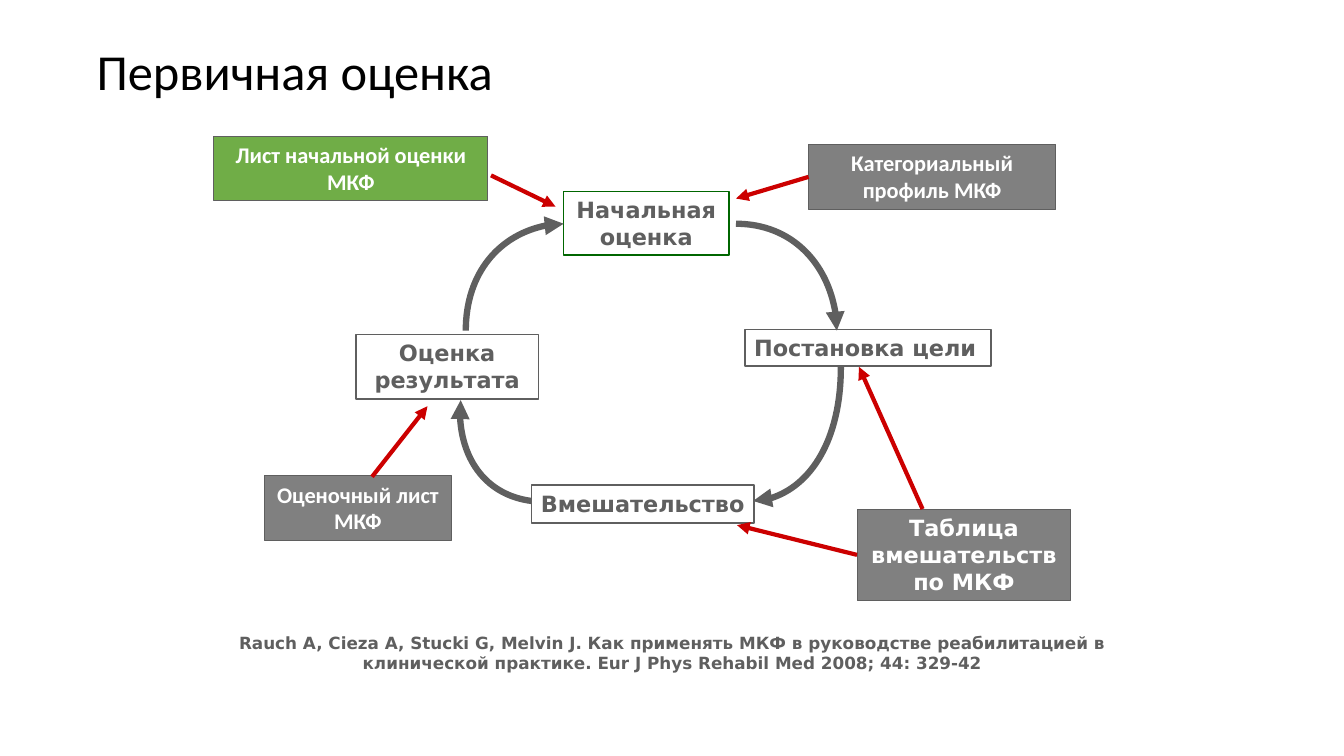
from dataclasses import dataclass

from lxml import etree
from pptx import Presentation
from pptx.dml.color import RGBColor
from pptx.enum.shapes import MSO_CONNECTOR, MSO_SHAPE
from pptx.enum.text import MSO_ANCHOR, MSO_AUTO_SIZE, PP_ALIGN
from pptx.oxml.ns import qn
from pptx.util import Inches, Pt

RECTANGLE = MSO_SHAPE.RECTANGLE
STRAIGHT = MSO_CONNECTOR.STRAIGHT
LEFT, CENTER = PP_ALIGN.LEFT, PP_ALIGN.CENTER
TOP = MSO_ANCHOR.TOP
FIT_SHAPE, NO_FIT = MSO_AUTO_SIZE.SHAPE_TO_FIT_TEXT, MSO_AUTO_SIZE.NONE
LEFT_SIDE = 1

SANS, BODY = "DejaVu Sans", "Calibri"
DARK, GRAY, GREEN, RED = "5F5F5F", "808080", "70AD47", "CC0000"
FOREST, WHITE, BLACK = "006600", "FFFFFF", "000000"

Point = tuple[float, float]


@dataclass
class Box:
    lines: list[str]
    left: float
    top: float
    width: float
    height: float
    fill: str | None = None
    line: str = DARK
    line_width: float = 1
    font: str = SANS
    color: str = DARK
    align: PP_ALIGN = CENTER


@dataclass
class Arrow:
    start: Point
    end: Point
    joined_tool: str | None = None


# Stages of the cycle
STAGES = [
    Box(["Начальная", "оценка"], 5.59, 1.9, 1.64, 0.63, line=FOREST),
    Box(["Постановка цели"], 7.39, 3.27, 2.44, 0.36, align=LEFT),
    Box(["Вмешательство"], 5.27, 4.81, 2.21, 0.38),
    Box(["Оценка результата"], 3.53, 3.32, 1.81, 0.64),
]

# Curved arrows: start, two control points, end
CURVES: list[list[Point]] = [
    [(4.62, 3.28), (4.62, 2.7), (5.05, 2.22), (5.59, 2.22)],
    [(7.3, 2.22), (7.85, 2.22), (8.3, 2.7), (8.3, 3.28)],
    [(8.34, 3.64), (8.34, 4.37), (7.95, 4.97), (7.47, 4.97)],
    [(5.27, 4.97), (4.82, 4.91), (4.51, 4.46), (4.57, 3.97)],
]

# Tools that support the stages
TOOLS = {
    "profile": Box(["Категориальный профиль МКФ"], 8.02, 1.43, 2.45, 0.65,
                   GRAY, DARK, 0.75, BODY, WHITE),
    "initial sheet": Box(["Лист начальной оценки МКФ"], 2.12, 1.35, 2.72, 0.64,
                         GREEN, DARK, 0.75, BODY, WHITE),
    "table": Box(["Таблица вмешательств по МКФ"], 8.5, 5.05, 2.12, 0.91,
                 GRAY, DARK, 0.75, SANS, WHITE),
    "result sheet": Box(["Оценочный лист МКФ"], 2.62, 4.72, 1.86, 0.64,
                        GRAY, DARK, 0.75, BODY, WHITE),
}

ARROWS = [
    Arrow((4.87, 1.74), (5.51, 2.05)),
    Arrow((8.02, 1.75), (7.3, 1.97), "profile"),
    Arrow((8.5, 5.51), (7.31, 5.21), "table"),
    Arrow((9.15, 5.05), (8.52, 3.64)),
    Arrow((3.69, 4.73), (4.24, 4.03)),
]


def rgb(value: str) -> RGBColor:
    return RGBColor.from_string(value)


def style_line(shape, color: str, width: float, arrow: bool = False) -> None:
    shape.line.color.rgb = rgb(color)
    shape.line.width = Pt(width)
    if arrow:
        line = shape.line._get_or_add_ln()
        etree.SubElement(line, qn("a:tailEnd"), type="triangle")


def write_text(shape, lines: list[str], font: str, size: float, color: str,
               bold: bool = True, align: PP_ALIGN = CENTER):
    frame = shape.text_frame
    frame.word_wrap = True
    frame.auto_size = FIT_SHAPE
    frame.vertical_anchor = TOP
    paragraph = frame.paragraphs[0]
    paragraph.alignment = align
    for index, line in enumerate(lines):
        if index:
            paragraph.add_line_break()
        run = paragraph.add_run()
        run.text = line
        run.font.name = font
        run.font.size = Pt(size)
        run.font.bold = bold
        run.font.color.rgb = rgb(color)
    return paragraph


def add_box(slide, box: Box):
    shape = slide.shapes.add_shape(
        RECTANGLE, Inches(box.left), Inches(box.top),
        Inches(box.width), Inches(box.height))
    shape.shadow.inherit = False
    if box.fill:
        shape.fill.solid()
        shape.fill.fore_color.rgb = rgb(box.fill)
    else:
        shape.fill.background()
        shape.text_frame.margin_left = Inches(0.09)
        shape.text_frame.margin_right = Inches(0.09)
    style_line(shape, box.line, box.line_width)
    write_text(shape, box.lines, box.font, 16, box.color, align=box.align)
    return shape


def add_curve(slide, points: list[Point]) -> None:
    start, *others = points
    builder = slide.shapes.build_freeform(
        Inches(start[0]), Inches(start[1]), scale=1.0)
    builder.add_line_segments(
        [(Inches(x), Inches(y)) for x, y in others], close=False)
    shape = builder.convert_to_shape()
    shape.shadow.inherit = False
    shape.fill.background()
    style_line(shape, DARK, 4.5, arrow=True)
    # Merge the three segments into one cubic curve
    outline = next(shape._element.iter(qn("a:path")))
    segments = outline.findall(qn("a:lnTo"))
    curve = etree.SubElement(outline, qn("a:cubicBezTo"))
    for segment in segments:
        curve.append(segment[0])
        outline.remove(segment)


def add_arrow(slide, arrow: Arrow, tools: dict) -> None:
    connector = slide.shapes.add_connector(
        STRAIGHT, *(Inches(value) for value in arrow.start + arrow.end))
    if arrow.joined_tool:
        connector.begin_connect(tools[arrow.joined_tool], LEFT_SIDE)
    style_line(connector, RED, 3, arrow=True)
    etree.SubElement(connector._element.spPr, qn("a:effectLst"))


def add_text_box(slide, left: float, top: float, width: float, height: float):
    return slide.shapes.add_textbox(
        Inches(left), Inches(top), Inches(width), Inches(height))


def main() -> None:
    presentation = Presentation()
    presentation.slide_width = Inches(13.33)
    presentation.slide_height = Inches(7.5)
    slide = presentation.slides.add_slide(presentation.slide_layouts[6])

    # Title
    title = add_text_box(slide, 0.86, 0.42, 11.6, 0.7)
    paragraph = write_text(title, ["Первичная оценка"], BODY, 36, BLACK,
                           bold=False, align=LEFT)
    paragraph.line_spacing = 0.9
    title.text_frame.auto_size = NO_FIT

    # Cycle, tools and pointers
    for stage in STAGES:
        add_box(slide, stage)
    for curve in CURVES:
        add_curve(slide, curve)
    tools = {name: add_box(slide, box) for name, box in TOOLS.items()}
    for arrow in ARROWS:
        add_arrow(slide, arrow, tools)

    # Reference
    reference = add_text_box(slide, 2.12, 6.23, 9.1, 0.51)
    write_text(reference, [
        "Rauch A, Cieza A, Stucki G, Melvin J. Как применять МКФ в руководстве "
        "реабилитацией в клинической практике. "
        "Eur J Phys Rehabil Med 2008; 44: 329-42"], SANS, 12, DARK)

    presentation.save("out.pptx")


if __name__ == "__main__":
    main()
